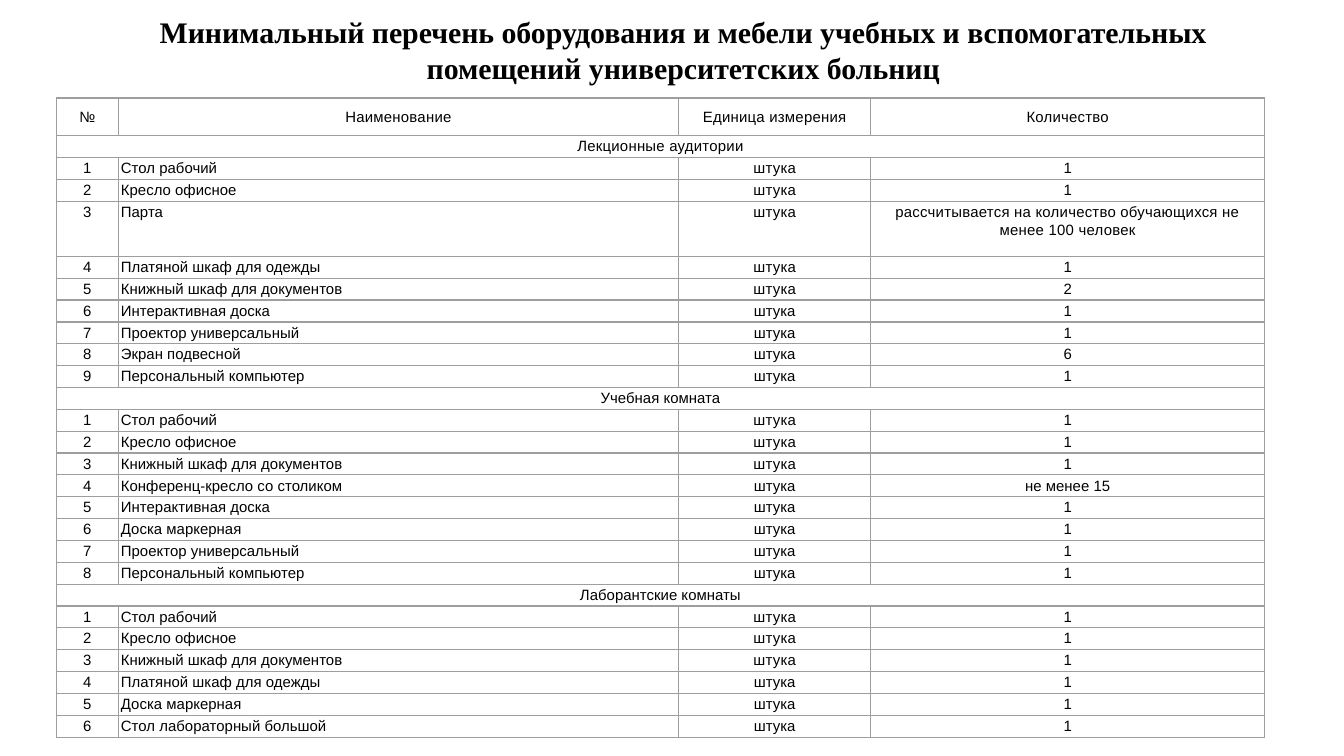
import dataclasses
import lxml.etree
import pptx
import pptx.dml.color
import pptx.enum.text
import pptx.oxml.ns
import pptx.slide
import pptx.table
import pptx.text.text
import pptx.util

Inches = pptx.util.Inches
Pt = pptx.util.Pt
Align = pptx.enum.text.PP_ALIGN
Anchor = pptx.enum.text.MSO_ANCHOR
qn = pptx.oxml.ns.qn

BLACK = pptx.dml.color.RGBColor(0x00, 0x00, 0x00)
GREY = pptx.dml.color.RGBColor(0x9E, 0x9E, 0x9E)

TITLE = ("Минимальный перечень оборудования и мебели учебных "
         "и вспомогательных помещений университетских больниц")
HEADS = ["№", "Наименование", "Единица измерения", "Количество"]
UNIT = "штука"
WIDTHS = [0.46, 4.17, 1.43, 2.93]
HEIGHT = 4.76
HEAD = 0.28
TALL = 0.41


@dataclasses.dataclass
class Item:
    name: str
    count: str = "1"
    tall: bool = False


@dataclasses.dataclass
class Room:
    name: str
    wide: bool
    loose: int
    items: list[Item]


@dataclasses.dataclass
class Line:
    texts: list[str]
    wide: list[bool]
    high: float = 0
    span: bool = False


ROOMS = [
    Room("Лекционные аудитории", True, 5, [
        Item("Стол рабочий"),
        Item("Кресло офисное"),
        Item("Парта", "рассчитывается на количество обучающихся "
             "не менее 100 человек", tall=True),
        Item("Платяной шкаф для одежды"),
        Item("Книжный шкаф для документов", "2"),
        Item("Интерактивная доска"),
        Item("Проектор универсальный"),
        Item("Экран подвесной", "6"),
        Item("Персональный компьютер"),
    ]),
    Room("Учебная комната", False, 3, [
        Item("Стол рабочий"),
        Item("Кресло офисное"),
        Item("Книжный шкаф для документов"),
        Item("Конференц-кресло со столиком", "не менее 15"),
        Item("Интерактивная доска"),
        Item("Доска маркерная"),
        Item("Проектор универсальный"),
        Item("Персональный компьютер"),
    ]),
    Room("Лаборантские комнаты", False, 3, [
        Item("Стол рабочий"),
        Item("Кресло офисное"),
        Item("Книжный шкаф для документов"),
        Item("Платяной шкаф для одежды"),
        Item("Доска маркерная"),
        Item("Стол лабораторный большой"),
    ]),
]


def set_font(par: pptx.text.text._Paragraph, face: str, size: int, bold: bool) -> None:
    par.font.name = face
    par.font.size = Pt(size)
    par.font.bold = bold
    par.font.color.rgb = BLACK


def add_edges(cell: pptx.table._Cell) -> None:
    props = cell._tc.get_or_add_tcPr()
    for tag in ("a:lnL", "a:lnR", "a:lnT", "a:lnB"):
        line = lxml.etree.SubElement(props, qn(tag), w=str(Pt(0.75)))
        fill = lxml.etree.SubElement(line, qn("a:solidFill"))
        lxml.etree.SubElement(fill, qn("a:srgbClr"), val=str(GREY))


def fill_cell(cell: pptx.table._Cell, text: str, wide: bool,
              align: Align, anchor: Anchor) -> None:
    cell.margin_left = cell.margin_right = Inches(0.02)
    cell.margin_top = cell.margin_bottom = Inches(0.01)
    cell.vertical_anchor = anchor
    par = cell.text_frame.paragraphs[0]
    par.alignment = align
    par.line_spacing = 1.07
    set_font(par, "Arial", 8, False)
    if text:
        run = par.add_run()
        run.text = text
        if wide:
            run._r.get_or_add_rPr().set("spc", "10")


def add_title(slide: pptx.slide.Slide) -> None:
    title = slide.shapes.title
    title.left, title.top = Inches(1.01), Inches(0)
    title.width, title.height = Inches(8.15), Inches(0.63)
    frame = title.text_frame
    frame.text = TITLE
    frame.word_wrap = True
    frame.auto_size = pptx.enum.text.MSO_AUTO_SIZE.NONE
    frame.vertical_anchor = Anchor.TOP
    frame.margin_left = frame.margin_right = Inches(0.1)
    frame.margin_top = frame.margin_bottom = Inches(0.1)
    par = frame.paragraphs[0]
    par.alignment = Align.CENTER
    par.line_spacing = 1.0
    set_font(par, "Times New Roman", 16, True)


def list_lines(rooms: list[Room]) -> list[Line]:
    lines = [Line(HEADS, [True] * 4, HEAD)]
    for room in rooms:
        lines.append(Line([room.name, "", "", ""], [room.wide] * 4, span=True))
        for num, item in enumerate(room.items, 1):
            wide = num <= room.loose
            lines.append(Line([str(num), item.name, UNIT, item.count],
                              [True, False, wide, wide],
                              TALL if item.tall else 0))
    return lines


def add_list(slide: pptx.slide.Slide, lines: list[Line]) -> None:
    table = slide.shapes.add_table(
        len(lines), len(WIDTHS), Inches(0.42), Inches(0.73),
        Inches(sum(WIDTHS)), Inches(HEIGHT)).table
    table.first_row = table.horz_banding = False
    for col, width in zip(table.columns, WIDTHS):
        col.width = Inches(width)

    fixed = [line.high for line in lines if line.high]
    base = (HEIGHT - sum(fixed)) / (len(lines) - len(fixed))
    for pos, line in enumerate(lines):
        table.rows[pos].height = Inches(line.high or base)
        anchor = Anchor.MIDDLE if pos == 0 else Anchor.TOP
        for col, text in enumerate(line.texts):
            cell = table.cell(pos, col)
            align = Align.LEFT if col == 1 and pos > 0 else Align.CENTER
            fill_cell(cell, text, line.wide[col], align, anchor)
            add_edges(cell)
            cell.fill.background()
        if line.span:
            table.cell(pos, 0).merge(table.cell(pos, len(WIDTHS) - 1))


def main() -> None:
    deck = pptx.Presentation()
    deck.slide_width = Inches(10)
    deck.slide_height = deck.slide_width * 9 // 16
    slide = deck.slides.add_slide(deck.slide_layouts[5])
    add_title(slide)
    add_list(slide, list_lines(ROOMS))
    deck.save("out.pptx")


if __name__ == "__main__":
    main()
